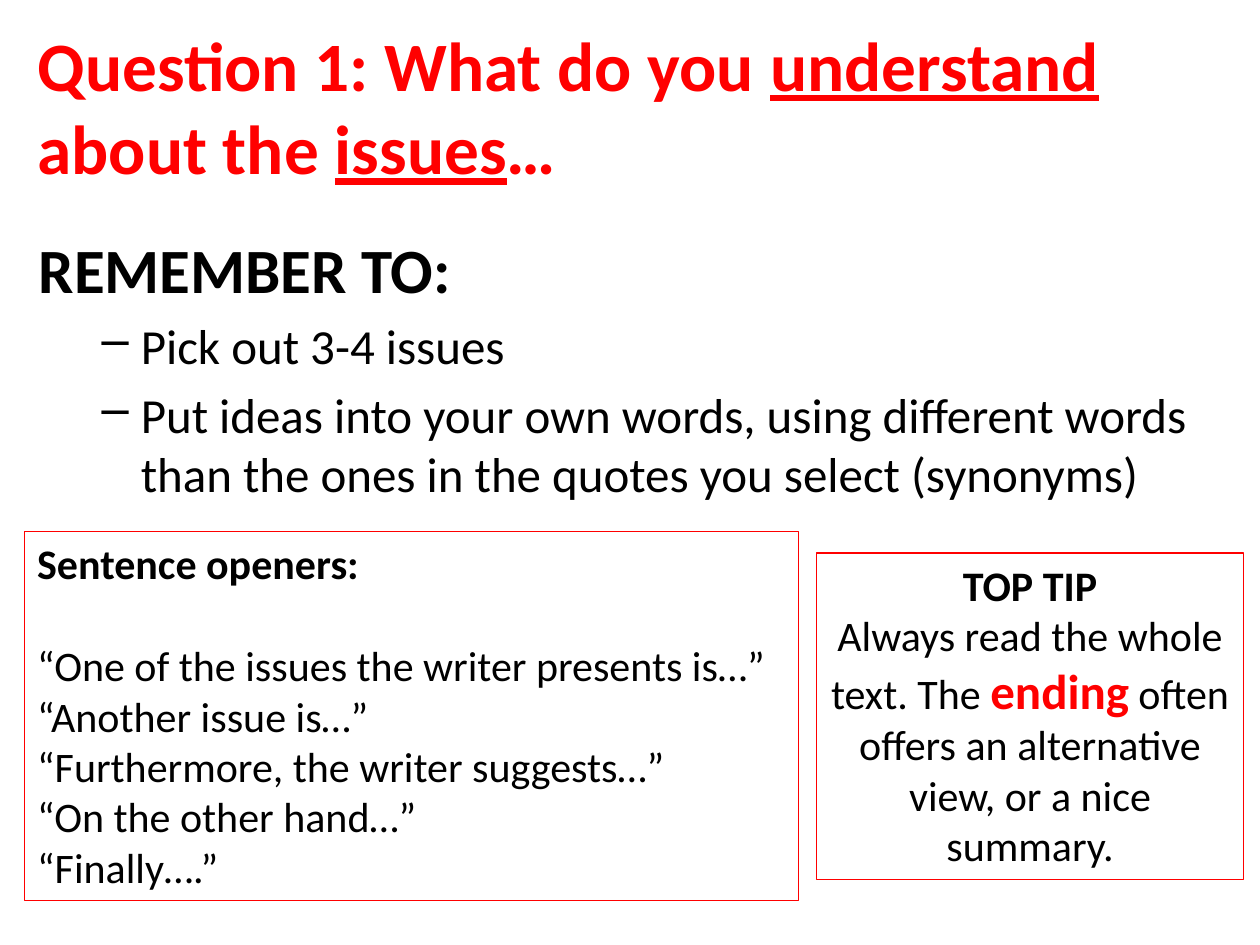
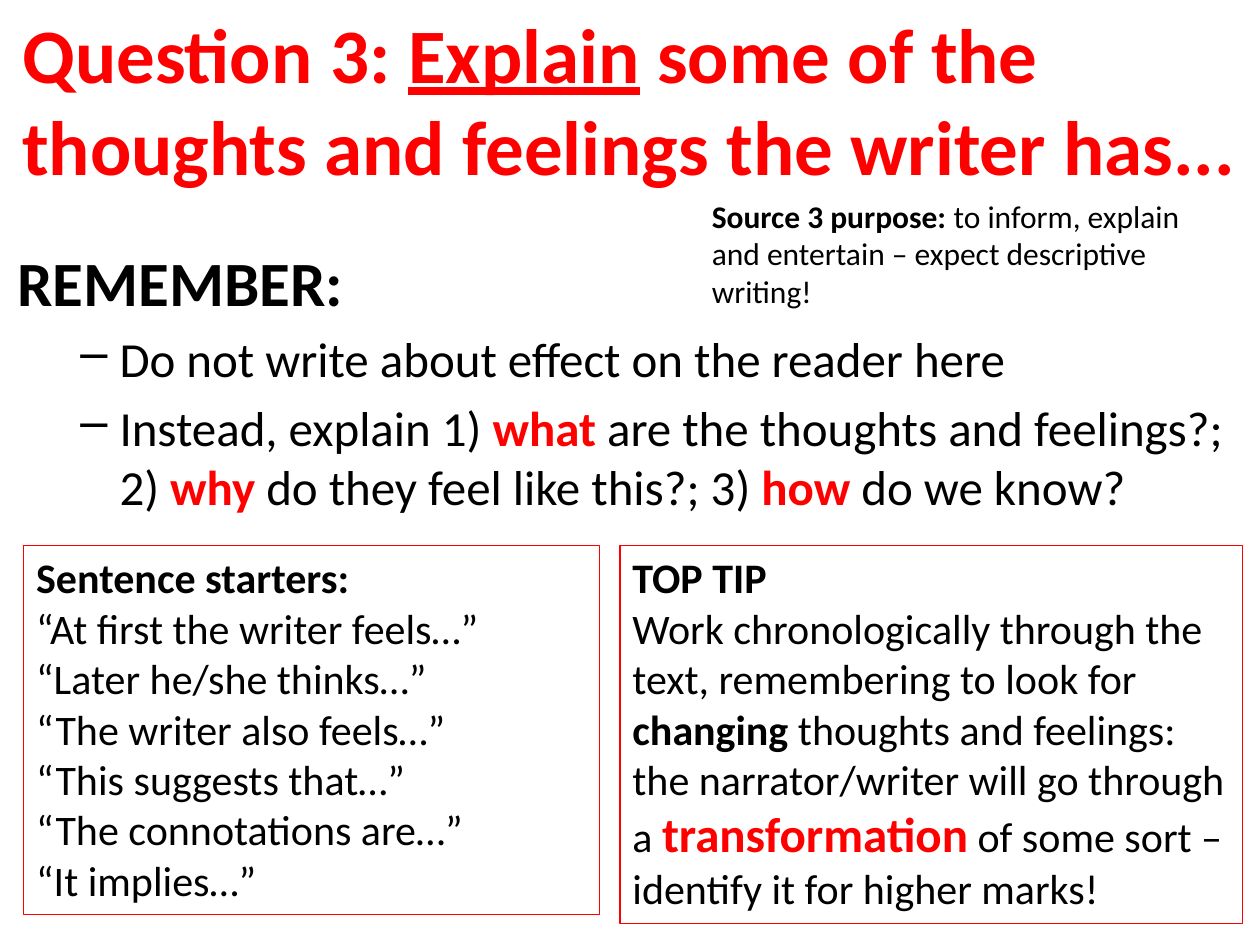
import lxml.etree
import pptx
import pptx.dml.color
import pptx.enum.text
import pptx.oxml.ns
import pptx.util

Cm, Pt = pptx.util.Cm, pptx.util.Pt
ALIGN = pptx.enum.text.PP_ALIGN
ANCHOR = pptx.enum.text.MSO_ANCHOR
FIT = pptx.enum.text.MSO_AUTO_SIZE

RED, BLACK = "FF0000", "000000"
PLAIN = {"name": "Calibri", "size": Pt(24), "bold": False, "color": BLACK}
BOLD = {"bold": True}
UNDERLINED = {"underline": True}
RED_BOLD = {"bold": True, "color": RED}
BIG_RED = {**RED_BOLD, "size": Pt(28)}
BLANK_LINE = Pt(29.3)


def colour(hex_code):
    return pptx.dml.color.RGBColor.from_string(hex_code)


def set_font(font, formats):
    for name, value in formats.items():
        if name == "color":
            font.color.rgb = colour(value)
        else:
            setattr(font, name, value)


def add_box(page, left, top, width, height, **frame_formats):
    box = page.shapes.add_textbox(Cm(left), Cm(top), Cm(width), Cm(height))
    box.text_frame.word_wrap = True
    for name, value in frame_formats.items():
        setattr(box.text_frame, name, value)
    return box


def add_para(box, spans, base=None, bullet=False, **para_formats):
    """Append a paragraph of spans: plain strings or (text, formats) pairs."""
    frame = box.text_frame
    para = frame.paragraphs[0]
    if para.runs:
        para = frame.add_paragraph()
    for name, value in para_formats.items():
        setattr(para, name, value)
    if bullet:
        add_dash(para)
    for item in spans:
        text, formats = (item, {}) if isinstance(item, str) else item
        span = para.add_run()
        span.text = text
        set_font(span.font, {**PLAIN, **(base or {}), **formats})


def add_dash(para):
    properties = para._p.get_or_add_pPr()
    properties.set("marL", str(Cm(2.06)))
    properties.set("indent", str(Cm(-0.79)))
    dash = lxml.etree.SubElement(properties, pptx.oxml.ns.qn("a:buChar"))
    dash.set("char", "–")


def add_title(page, place, size, spans):
    box = add_box(page, *place, vertical_anchor=ANCHOR.MIDDLE)
    add_para(box, spans, {**RED_BOLD, "size": Pt(size)})


def add_reminders(page, place, heading, reminders):
    box = add_box(page, *place)
    add_para(box, [heading], {"size": Pt(36), "bold": True})
    for spans in reminders:
        add_para(box, spans, {"size": Pt(28)}, bullet=True, level=1,
                 space_before=Pt(5.6))


def add_panel(page, place, heading, lines, gap=Pt(0), alignment=ALIGN.LEFT):
    """Draw a red-edged panel; gap is the space below its heading."""
    box = add_box(page, *place, auto_size=FIT.SHAPE_TO_FIT_TEXT)
    box.line.color.rgb = colour(RED)
    box.line.width = Pt(0.75)
    add_para(box, [heading], BOLD, alignment=alignment)
    for number, spans in enumerate(lines):
        add_para(box, spans, alignment=alignment,
                 space_before=Pt(0) if number else gap)


def add_note(page, place, spans):
    box = add_box(page, *place, auto_size=FIT.SHAPE_TO_FIT_TEXT)
    add_para(box, spans, {"size": Pt(18)})


def build_issues_page(page):
    add_title(page, (0.51, 0.53, 24.61, 3.18), 39.6, [
        "Question 1: What do you ", ("understand", UNDERLINED),
        " about the ", ("issues", UNDERLINED), "…"])
    add_reminders(page, (0.53, 4.52, 24.56, 6.83), "REMEMBER TO:", [
        ["Pick out 3-4 issues"],
        ["Put ideas into your own words, using different words than "
         "the ones in the quotes you select (synonyms)"]])
    add_panel(page, (0.5, 10.72, 15.6, 7.44), "Sentence openers:", [
        ["“One of the issues the writer presents is…”"],
        ["“Another issue is…”"],
        ["“Furthermore, the writer suggests…”"],
        ["“On the other hand…”"],
        ["“Finally….”"]], gap=BLANK_LINE)
    add_panel(page, (16.46, 11.15, 8.61, 6.58), "TOP TIP", [
        ["Always read the whole text. The ", ("ending", BIG_RED),
         " often offers an alternative view, or a nice summary."]],
        alignment=ALIGN.CENTER)


def build_feelings_page(page):
    add_title(page, (0.2, -0.51, 25.1, 5), 44, [
        "Question 3: ", ("Explain", UNDERLINED),
        " some of the thoughts and feelings the writer has..."])
    add_reminders(page, (0.1, 4.78, 25.04, 6.55), "REMEMBER:", [
        ["Do not write about effect on the reader here"],
        ["Instead, explain 1) ", ("what", RED_BOLD),
         " are the thoughts and feelings?; 2) ", ("why", RED_BOLD),
         " do they feel like this?; 3) ", ("how", RED_BOLD),
         " do we know?"]])
    add_panel(page, (0.48, 11, 11.61, 7.44), "Sentence starters:", [
        ["“At first the writer feels…”"],
        ["“Later he/she thinks…”"],
        ["“The writer also feels…”"],
        ["“This suggests that…”"],
        ["“The connotations are…”"],
        ["“It implies…”"]])
    add_panel(page, (12.5, 11, 12.55, 7.62), "TOP TIP", [
        ["Work chronologically through the text, remembering to look for ",
         ("changing", BOLD),
         " thoughts and feelings: the narrator/writer will go through a ",
         ("transformation", BIG_RED),
         " of some sort – identify it for higher marks!"]])
    add_note(page, (14.1, 3.84, 10.21, 2.57), [
        ("Source 3 purpose:", BOLD),
        " to inform, explain and entertain – expect descriptive writing!"])


def main():
    deck = pptx.Presentation()
    deck.slide_width, deck.slide_height = Cm(25.4), Cm(19.05)
    for build_page in (build_issues_page, build_feelings_page):
        build_page(deck.slides.add_slide(deck.slide_layouts[6]))
    deck.save("out.pptx")


if __name__ == "__main__":
    main()
